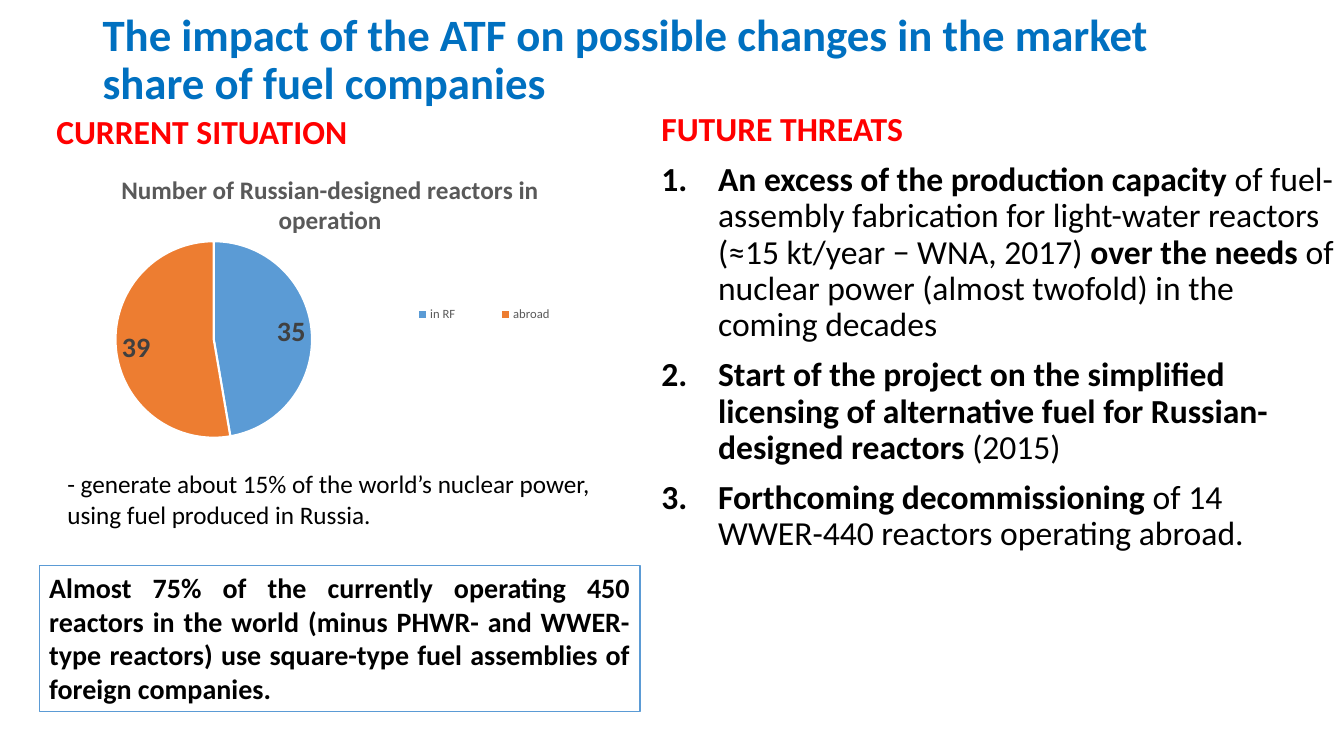
from dataclasses import dataclass, field

import lxml.etree
import pptx
import pptx.chart.data
import pptx.dml.color
import pptx.enum.chart
import pptx.enum.shapes
import pptx.enum.text
import pptx.oxml
import pptx.oxml.ns
import pptx.util

Pt = pptx.util.Pt
PP_ALIGN = pptx.enum.text.PP_ALIGN
MSO_ANCHOR = pptx.enum.text.MSO_ANCHOR
FONT = "Calibri"
BLUE, RED, BLACK = "0070C0", "FF0000", "000000"
PIE_BLUE, PIE_ORANGE, WHITE = "5B9BD5", "ED7D31", "FFFFFF"
GREY, DARK_GREY = "595959", "404040"


@dataclass
class Run:
    text: str
    bold: bool = False


@dataclass
class Block:
    left: float
    top: float
    width: float
    height: float
    paragraphs: list[list[Run]]
    size: float
    color: str = BLACK
    format: dict = field(default_factory=dict)
    border: str | None = None


BLOCKS = [
    Block(66.2, 2.2, 828, 82.8,
          [[Run("The impact of the ATF on possible changes in the market "
                "share of fuel companies", True)]],
          32, BLUE, {"line_spacing": 0.9, "anchor": MSO_ANCHOR.MIDDLE}),
    Block(41, 331.2, 402.5, 51.1,
          [[Run("- generate about 15% of the world’s nuclear power, "
                "using fuel produced in Russia.")]], 18),
    Block(28.1, 403.9, 429.1, 104.4,
          [[Run("Almost 75% of the currently operating 450 reactors in the world "
                "(minus PHWR- and WWER-type reactors) use square-type fuel "
                "assemblies of foreign companies.", True)]],
          20, format={"align": PP_ALIGN.JUSTIFY}, border=PIE_BLUE),
    Block(33.1, 75.6, 351.4, 36, [[Run("CURRENT SITUATION", True)]], 24, RED),
]

THREATS_BOX = (465.4, 76.6, 494.6, 450.7)
THREATS = [
    [Run("An excess of the production capacity ", True),
     Run("of fuel-assembly fabrication for light-water reactors "
         "(≈15 kt/year − WNA, 2017) "),
     Run("over the needs ", True),
     Run("of nuclear power (almost twofold) in the coming decades")],
    [Run("Start of the project on the simplified licensing of alternative "
         "fuel for Russian-designed reactors ", True), Run("(2015)")],
    [Run("Forthcoming decommissioning ", True),
     Run("of 14 WWER-440 reactors operating abroad.")],
]


def rgb(color: str) -> pptx.dml.color.RGBColor:
    return pptx.dml.color.RGBColor.from_string(color)


def set_font(font, size: float, color: str, bold: bool = False) -> None:
    font.name, font.size, font.bold = FONT, Pt(size), bold
    font.color.rgb = rgb(color)


def add_paragraph(tf, runs: list[Run], *, size: float, color: str = BLACK,
                  align=PP_ALIGN.LEFT, line_spacing: float = 1.0,
                  space_before: float = 0, numbered: bool = False) -> None:
    """Fill the frame's empty first paragraph, or append a new one."""
    p = tf.paragraphs[0] if not tf.paragraphs[0].runs else tf.add_paragraph()
    p.alignment, p.line_spacing, p.space_before = align, line_spacing, Pt(space_before)
    for run in runs:
        r = p.add_run()
        r.text = run.text
        set_font(r.font, size, color, run.bold)
    if numbered:
        pPr = p._p.get_or_add_pPr()
        pPr.set("marL", str(Pt(40.5)))
        pPr.set("indent", str(-Pt(40.5)))
        lxml.etree.SubElement(pPr, pptx.oxml.ns.qn("a:buFont"), typeface="+mj-lt")
        lxml.etree.SubElement(pPr, pptx.oxml.ns.qn("a:buAutoNum"), type="arabicPeriod")


def add_frame(s, left: float, top: float, width: float, height: float,
              border: str | None = None):
    box = [Pt(v) for v in (left, top, width, height)]
    if border:
        sp = s.shapes.add_shape(pptx.enum.shapes.MSO_SHAPE.RECTANGLE, *box)
        sp.shadow.inherit = False
        sp.fill.background()
        sp.line.color.rgb = rgb(border)
        sp.line.width = Pt(0.75)
    else:
        sp = s.shapes.add_textbox(*box)
    tf = sp.text_frame
    tf.word_wrap = True
    tf.vertical_anchor = MSO_ANCHOR.TOP
    return tf


def add_block(s, block: Block) -> None:
    tf = add_frame(s, block.left, block.top, block.width, block.height, block.border)
    options = dict(block.format)
    tf.vertical_anchor = options.pop("anchor", MSO_ANCHOR.TOP)
    for runs in block.paragraphs:
        add_paragraph(tf, runs, size=block.size, color=block.color, **options)


def add_threats(s) -> None:
    tf = add_frame(s, *THREATS_BOX)
    spacing = {"size": 24, "line_spacing": 0.9, "space_before": 10}
    add_paragraph(tf, [Run("FUTURE THREATS", True)], color=RED, **spacing)
    for runs in THREATS:
        add_paragraph(tf, runs, numbered=True, **spacing)


def layout_xml(x: float, y: float, w: float, h: float, inner: bool = False):
    """Manual chart layout, in fractions of the chart area."""
    target = '<c:layoutTarget val="inner"/>' if inner else ""
    return pptx.oxml.parse_xml(
        f'<c:layout {pptx.oxml.ns.nsdecls("c")}><c:manualLayout>{target}'
        '<c:xMode val="edge"/><c:yMode val="edge"/>'
        f'<c:x val="{x}"/><c:y val="{y}"/><c:w val="{w}"/><c:h val="{h}"/>'
        '</c:manualLayout></c:layout>')


def set_layout(parent, layout, index: int) -> None:
    for old in parent.findall(pptx.oxml.ns.qn("c:layout")):
        parent.remove(old)
    parent.insert(index, layout)


def add_reactor_pie(s) -> None:
    data = pptx.chart.data.CategoryChartData()
    data.categories = ["in RF", "abroad"]
    data.add_series("Series 1", (35, 39))
    chart = s.shapes.add_chart(pptx.enum.chart.XL_CHART_TYPE.PIE, Pt(28.1), Pt(111.6),
                               Pt(415.4), Pt(209.5), data).chart
    set_font(chart.font, 10, BLACK)

    chart.has_title = True
    p = chart.chart_title.text_frame.paragraphs[0]
    r = p.add_run()
    r.text = "Number of Russian-designed reactors in operation"
    set_font(r.font, 18, GREY, True)
    chart.chart_title.include_in_layout = False

    chart.has_legend = True
    legend = chart.legend
    legend.position = pptx.enum.chart.XL_LEGEND_POSITION.BOTTOM
    legend.include_in_layout = False
    set_font(legend.font, 9, GREY)
    set_layout(legend._element, layout_xml(0.58, 0.49, 0.37, 0.1), 1)

    plot = chart.plots[0]
    plot.vary_by_categories = True
    set_layout(chart._chartSpace.chart.plotArea,
               layout_xml(0.08, 0.29, 0.44, 0.67, inner=True), 0)
    series = plot.series[0]
    for i, color in enumerate((PIE_BLUE, PIE_ORANGE)):
        fmt = series.points[i].format
        fmt.fill.solid()
        fmt.fill.fore_color.rgb = rgb(color)
        fmt.line.color.rgb = rgb(WHITE)
        fmt.line.width = Pt(1.5)
    labels = series.data_labels
    labels.show_value = True
    labels.position = pptx.enum.chart.XL_LABEL_POSITION.INSIDE_END
    set_font(labels.font, 20, DARK_GREY, True)


def main() -> None:
    prs = pptx.Presentation()
    prs.slide_width, prs.slide_height = Pt(960), Pt(540)
    s = prs.slides.add_slide(prs.slide_layouts[6])
    title, *others = BLOCKS
    add_block(s, title)
    add_threats(s)
    add_reactor_pie(s)
    for block in others:
        add_block(s, block)
    prs.save("out.pptx")


if __name__ == "__main__":
    main()
